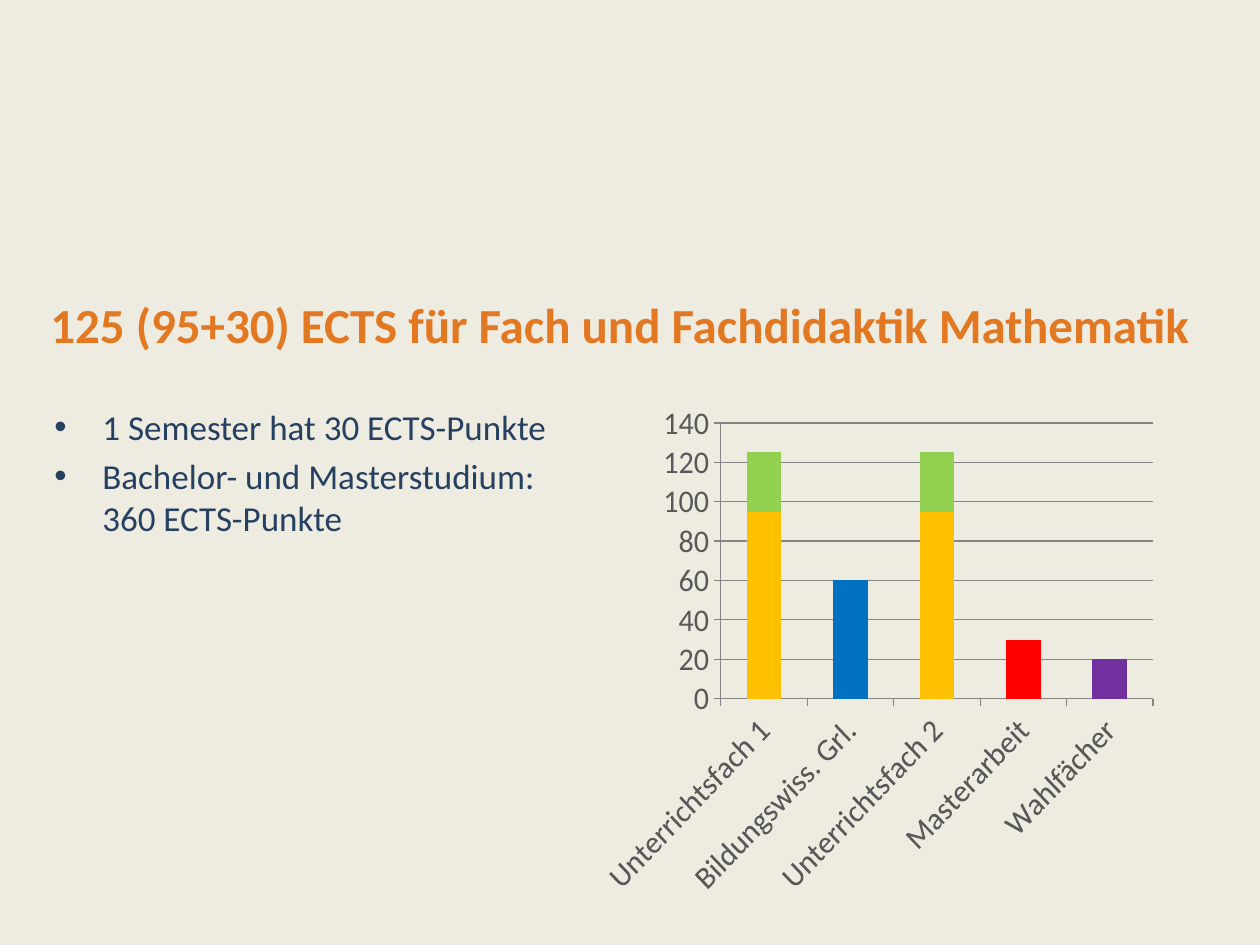
from lxml import etree
from pptx import Presentation
from pptx import util as u
from pptx.chart.data import CategoryChartData
from pptx.dml.color import RGBColor
from pptx.enum import chart as ch, text
from pptx.oxml import ns

TITLE = "125 (95+30) ECTS für Fach und Fachdidaktik Mathematik"
BULLETS = ["1 Semester hat 30 ECTS-Punkte", "Bachelor- und Masterstudium: 360 ECTS-Punkte"]
CATEGORIES = ["Unterrichtsfach 1", "Bildungswiss. Grl.", "Unterrichtsfach 2", "Masterarbeit", "Wahlfächer"]
SERIES = [
    ("Series 1", [95, 60, 95, 30, 20], "yellow", {1: "blue", 3: "red", 4: "purple"}),
    ("Series 2", [30, None, 30, None, None], "green", {}),
]
PLOT = {"x": 0.143, "y": 0.044, "w": 0.687, "h": 0.505}
COLORS = {
    "background": "EEECE1", "title": "E37823", "body": "254061", "label": "595959", "line": "868686",
    "yellow": "FFC000", "green": "92D050", "blue": "0070C0", "red": "FF0000", "purple": "7030A0",
}
FONT = "Calibri"
TITLE_BOX = (38, 289, 1176, 69)
BODY_BOX = (42, 399, 539, 546)
CHART_BOX = (601, 399, 659, 546)
INDENT = 48


def px(n):
    return round(n * 914400 / 126)


def color(name):
    return RGBColor.from_string(COLORS[name])


def style(font, size, name, bold=False):
    font.name, font.size, font.bold = FONT, u.Pt(size), bold
    font.color.rgb = color(name)


def paint(fill, name):
    fill.solid()
    fill.fore_color.rgb = color(name)


def add_text(s, box, lines, size, name, bold=False):
    tf = s.shapes.add_textbox(*map(px, box)).text_frame
    tf.word_wrap = True
    tf.text = "\n".join(lines)
    for p in tf.paragraphs:
        for r in p.runs:
            style(r.font, size, name, bold)
    return tf


def add_bullets(tf):
    for i, p in enumerate(tf.paragraphs):
        pPr = p._p.get_or_add_pPr()
        pPr.set("marL", str(px(INDENT)))
        pPr.set("indent", str(-px(INDENT)))
        etree.SubElement(pPr, ns.qn("a:buFont")).set("typeface", "Arial")
        etree.SubElement(pPr, ns.qn("a:buChar")).set("char", "•")
        if i:
            p.space_before = u.Pt(4)


def place_plot(chart):
    area = chart._chartSpace.chart.plotArea
    for old in area.findall(ns.qn("c:layout")):
        area.remove(old)
    layout = etree.Element(ns.qn("c:layout"))
    area.insert(0, layout)
    manual = etree.SubElement(layout, ns.qn("c:manualLayout"))
    settings = [("layoutTarget", "inner"), ("xMode", "edge"), ("yMode", "edge"), *PLOT.items()]
    for tag, val in settings:
        etree.SubElement(manual, ns.qn(f"c:{tag}")).set("val", str(val))


def add_ects_chart(s):
    data = CategoryChartData()
    data.categories = CATEGORIES
    for name, values, *_ in SERIES:
        data.add_series(name, values)
    chart = s.shapes.add_chart(ch.XL_CHART_TYPE.COLUMN_STACKED, *map(px, CHART_BOX), data).chart
    chart.has_legend = chart.has_title = False
    chart.font.name, chart.font.size = FONT, u.Pt(18)
    plot = chart.plots[0]
    plot.vary_by_categories = False
    plot.gap_width, plot.overlap = 150, 100
    for series, (_, _, fill, points) in zip(plot.series, SERIES):
        paint(series.format.fill, fill)
        series.invert_if_negative = False
        for i, name in points.items():
            paint(series.points[i].format.fill, name)
    cat, val = chart.category_axis, chart.value_axis
    val.minimum_scale, val.maximum_scale, val.major_unit = 0, 140, 20
    val.has_major_gridlines = True
    for axis in (cat, val):
        axis.major_tick_mark = ch.XL_TICK_MARK.OUTSIDE
        style(axis.tick_labels.font, 18, "label")
    for line in (cat.format.line, val.format.line, val.major_gridlines.format.line):
        line.color.rgb = color("line")
        line.width = u.Pt(0.75)
    cat._element.find(ns.qn("c:txPr")).find(ns.qn("a:bodyPr")).set("rot", "-2700000")
    place_plot(chart)


def main():
    prs = Presentation()
    prs.slide_width, prs.slide_height = px(1260), px(945)
    s = prs.slides.add_slide(prs.slide_layouts[6])
    paint(s.background.fill, "background")
    title = add_text(s, TITLE_BOX, [TITLE], 28, "title", True)
    title.vertical_anchor = text.MSO_ANCHOR.MIDDLE
    add_bullets(add_text(s, BODY_BOX, BULLETS, 20, "body"))
    add_ects_chart(s)
    prs.save("out.pptx")


if __name__ == "__main__":
    main()
